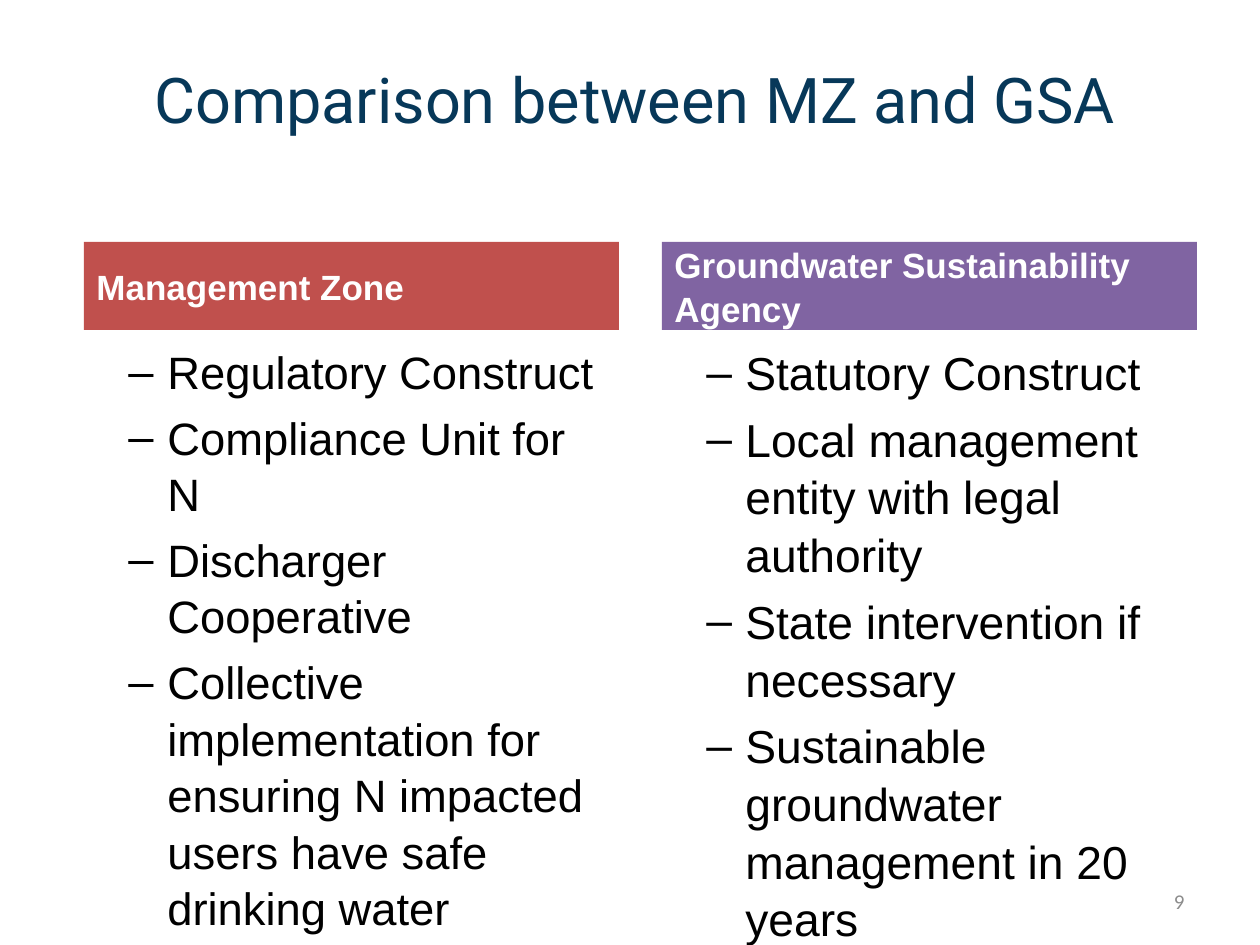
from lxml import etree
from pptx import Presentation
from pptx.dml.color import RGBColor
from pptx.enum.shapes import MSO_SHAPE
from pptx.enum.text import MSO_ANCHOR, MSO_AUTO_SIZE, PP_ALIGN
from pptx.oxml.ns import qn
from pptx.util import Emu, Pt

RECTANGLE = MSO_SHAPE.RECTANGLE
TOP, MIDDLE = MSO_ANCHOR.TOP, MSO_ANCHOR.MIDDLE
LEFT, CENTER, RIGHT = PP_ALIGN.LEFT, PP_ALIGN.CENTER, PP_ALIGN.RIGHT
NO_AUTOFIT = MSO_AUTO_SIZE.NONE
TITLE_ONLY = 5
EMU_PER_PX = 914400 // 126

COLORS = {
    "title": "073859",
    "zone": "C0504D",
    "agency": "8064A2",
    "header": "FFFFFF",
    "body": "000000",
    "number": "8C8C8C",
}
TITLE_FONT = {"name": "Roboto", "size": Pt(36), "bold": False}
HEADER_FONT = {"name": "Arial", "size": Pt(20), "bold": True}
NUMBER_FONT = {"name": "Calibri", "size": Pt(12), "bold": False}

HEADER_HEIGHT = 88
HEADER_GAP = 6
COLUMN_WIDTH = 535
COLUMN_STEP = 578
COLUMNS = [
    ("zone", "Management Zone", 25.9, [
        "Regulatory Construct",
        "Compliance Unit for N",
        "Discharger Cooperative",
        "Collective implementation for ensuring N impacted users have safe drinking water",
    ]),
    ("agency", "Groundwater Sustainability Agency", 26.4, [
        "Statutory Construct",
        "Local management entity with legal authority",
        "State intervention if necessary",
        "Sustainable groundwater management in 20 years",
    ]),
]


def px(value):
    return Emu(value * EMU_PER_PX)


def rgb(name):
    return RGBColor.from_string(COLORS[name])


def set_attributes(target, values):
    for name, value in values.items():
        setattr(target, name, value)


def write(shape, lines, font, color, anchor, paragraph_format):
    frame = shape.text_frame
    set_attributes(frame, {"word_wrap": True, "auto_size": NO_AUTOFIT,
                           "vertical_anchor": anchor})
    frame.text = "\n".join(lines)
    for paragraph in frame.paragraphs:
        set_attributes(paragraph, paragraph_format)
        for run in paragraph.runs:
            set_attributes(run.font, font)
            run.font.color.rgb = rgb(color)


def add_dash(paragraph):
    properties = paragraph._p.get_or_add_pPr()
    properties.set("marL", str(px(71)))
    properties.set("indent", str(px(-39)))
    etree.SubElement(properties, qn("a:buFont")).set("typeface", "Arial")
    etree.SubElement(properties, qn("a:buChar")).set("char", "–")


def place_title(slide, left, top, width, height):
    title = slide.shapes.title
    set_attributes(title, {"left": px(left), "top": px(top),
                           "width": px(width), "height": px(height)})
    write(title, ["Comparison between MZ and GSA"], TITLE_FONT, "title",
          MIDDLE, {"alignment": CENTER})


def add_column(slide, left, top, width, height, column):
    fill, heading, size, points = column
    header = slide.shapes.add_shape(
        RECTANGLE, px(left), px(top), px(width), px(HEADER_HEIGHT))
    header.shadow.inherit = False
    header.fill.solid()
    header.fill.fore_color.rgb = rgb(fill)
    header.line.fill.background()
    write(header, [heading], HEADER_FONT, "header", MIDDLE,
          {"alignment": LEFT, "line_spacing": 1.04})

    offset = HEADER_HEIGHT + HEADER_GAP
    body = slide.shapes.add_textbox(
        px(left), px(top + offset), px(width), px(height - offset))
    body_font = {"name": "Arial", "size": Pt(size), "bold": False}
    write(body, points, body_font, "body", TOP,
          {"level": 1, "alignment": LEFT, "line_spacing": 1.04,
           "space_before": Pt(round(size * 0.2, 1))})
    for paragraph in body.text_frame.paragraphs:
        add_dash(paragraph)


def add_slide_number(slide, left, top, width, height):
    number = slide.shapes.add_textbox(px(left), px(top), px(width), px(height))
    write(number, ["9"], NUMBER_FONT, "number", MIDDLE, {"alignment": RIGHT})


def main():
    presentation = Presentation()
    presentation.slide_width = px(1260)
    presentation.slide_height = px(945)
    slide = presentation.slides.add_slide(presentation.slide_layouts[TITLE_ONLY])
    place_title(slide, 73, 38, 1124, 120)
    for index, column in enumerate(COLUMNS):
        add_column(slide, 84 + index * COLUMN_STEP, 242, COLUMN_WIDTH, 588, column)
    add_slide_number(slide, 903, 876, 294, 50)
    presentation.save("out.pptx")


if __name__ == "__main__":
    main()
